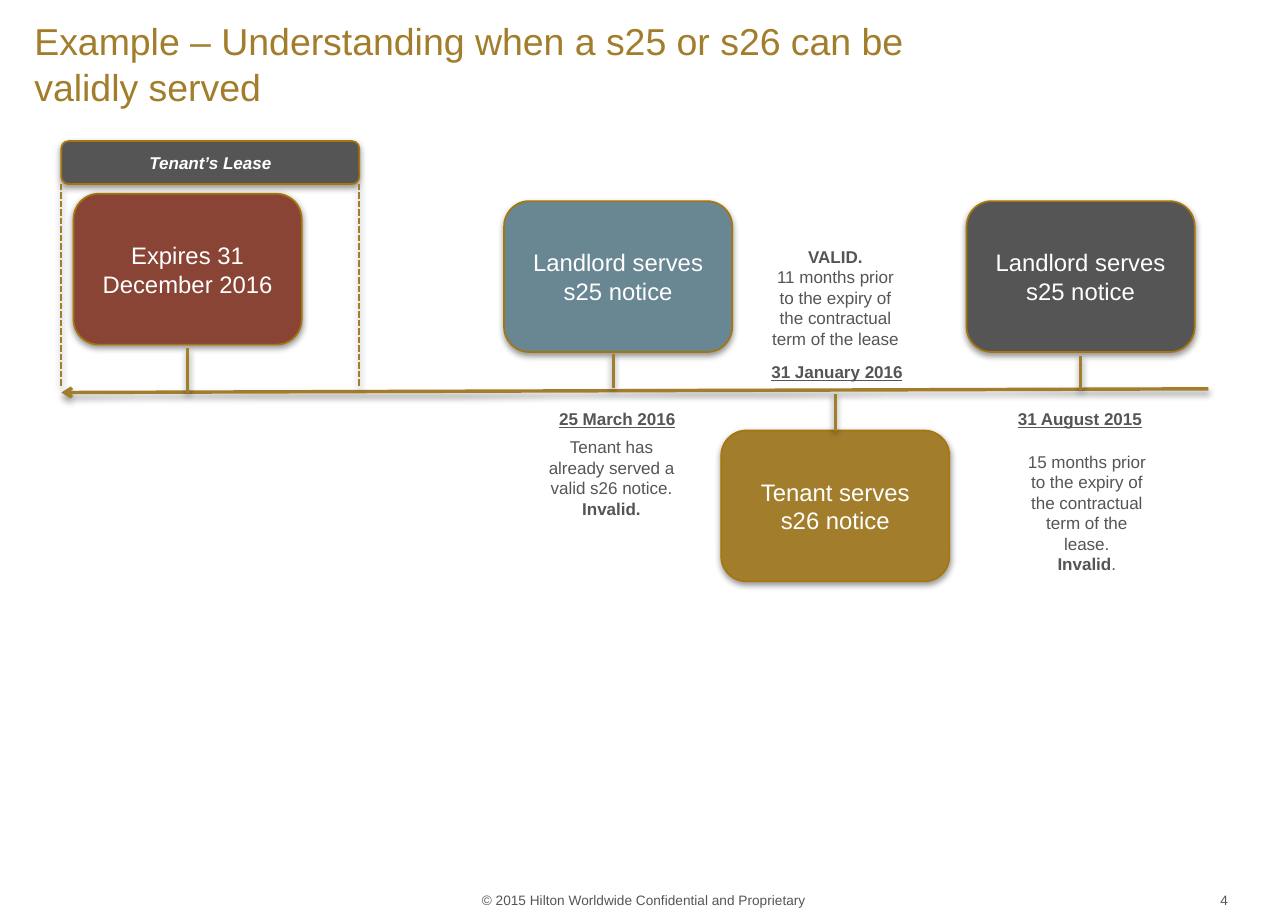
from lxml.etree import SubElement
from pptx import Presentation
from pptx.dml.color import RGBColor
from pptx.enum.dml import MSO_LINE
from pptx.enum.shapes import MSO_CONNECTOR, MSO_SHAPE
from pptx.enum.text import MSO_ANCHOR, MSO_AUTO_SIZE, PP_ALIGN
from pptx.oxml.ns import qn
from pptx.util import Inches, Pt

SLIDE_WIDTH, SLIDE_HEIGHT = Inches(10.5), Inches(7.5)
COLUMNS, ROWS = 42, 30
GOLD, EDGE, GREY = "A27E2C", "A4760C", "555555"
RED, TEAL, WHITE, BLACK = "8A4435", "698792", "FFFFFF", "000000"
NOTICE_SIZE = (7.44, 4.92)
AXIS_LEFT, LEASE_WIDTH = 2, 9.72
LEASE_TOP, LEASE_HEIGHT = 4.6, 1.4


def color(hex_string):
    return RGBColor.from_string(hex_string)


def column(count):
    return round(SLIDE_WIDTH * count / COLUMNS)


def row(count):
    return round(SLIDE_HEIGHT * count / ROWS)


def place(left, top, width, height):
    return column(left), row(top), column(width), row(height)


def style_font(font, size, hex_string, bold=None, italic=None, underline=None):
    font.size, font.name = Pt(size), "Arial"
    font.color.rgb = color(hex_string)
    font.bold, font.italic, font.underline = bold, italic, underline


def add_shadow(effects, distance, opacity):
    """Fill an effect list with a soft shadow that falls straight down."""
    shadow = SubElement(effects, qn("a:outerShdw"), blurRad=str(Pt(4)), dist=str(Pt(distance)),
                        dir="5400000", algn="ctr", rotWithShape="0")
    shade = SubElement(shadow, qn("a:srgbClr"), val=BLACK)
    SubElement(shade, qn("a:alpha"), val=str(opacity * 1000))


def add_title(slide, text):
    title = slide.shapes.title
    title.left, title.top, title.width, title.height = place(1.12, 1.16, 28.84, 1.8)
    frame = title.text_frame
    frame.text = text
    frame.auto_size = MSO_AUTO_SIZE.NONE
    frame.vertical_anchor = MSO_ANCHOR.MIDDLE
    frame.margin_left = 0
    para = frame.paragraphs[0]
    para.alignment = PP_ALIGN.LEFT
    para.line_spacing = Pt(26.7)
    style_font(para.font, 22, GOLD)


def add_text(slide, area, lines, align=PP_ALIGN.CENTER, anchor=MSO_ANCHOR.TOP, wrap=True):
    """Add a text box; each line is its text and its font settings."""
    frame = slide.shapes.add_textbox(*place(*area)).text_frame
    frame.word_wrap = wrap
    frame.vertical_anchor = anchor
    for index, (text, settings) in enumerate(lines):
        para = frame.add_paragraph() if index else frame.paragraphs[0]
        para.text = text
        para.alignment = align
        style_font(para.font, **settings)
    return frame


def add_date(slide, left, top, width, text, wrap=False):
    settings = dict(size=10, hex_string=GREY, bold=True, underline=True)
    add_text(slide, (left, top, width, 1.08), [(text, settings)], PP_ALIGN.LEFT, wrap=wrap)


def add_remark(slide, area, *lines):
    """Add a centred remark; each line is its text and whether it is bold."""
    return add_text(slide, area, [(text, dict(size=10, hex_string=GREY, bold=bold))
                                  for text, bold in lines])


def add_box(slide, area, text, fill, size=14, **emphasis):
    box = slide.shapes.add_shape(MSO_SHAPE.ROUNDED_RECTANGLE, *place(*area))
    box.fill.solid()
    box.fill.fore_color.rgb = color(fill)
    box.line.color.rgb = color(EDGE)
    box.line.width = Pt(1)
    box.shadow.inherit = False
    add_shadow(box.element.spPr.find(qn("a:effectLst")), 1.6, 42)
    frame = box.text_frame
    frame.text = text
    frame.vertical_anchor = MSO_ANCHOR.MIDDLE
    para = frame.paragraphs[0]
    para.alignment = PP_ALIGN.CENTER
    style_font(para.font, size, WHITE, **emphasis)
    return box


def add_line(slide, start, end, width=2, dash=None, arrow=False):
    line = slide.shapes.add_connector(MSO_CONNECTOR.STRAIGHT, column(start[0]), row(start[1]),
                                      column(end[0]), row(end[1]))
    line.line.color.rgb = color(GOLD)
    line.line.width = Pt(width)
    if dash:
        line.line.dash_style = dash
    properties = line.element.spPr
    if arrow:
        SubElement(properties.find(qn("a:ln")), qn("a:headEnd"), type="arrow")
    add_shadow(SubElement(properties, qn("a:effectLst")), 2, 40)
    return line


def add_lease(slide):
    bottom = LEASE_TOP + LEASE_HEIGHT
    add_box(slide, (AXIS_LEFT, LEASE_TOP, LEASE_WIDTH, LEASE_HEIGHT), "Tenant’s Lease", GREY,
            size=10, bold=True, italic=True)
    for edge in (AXIS_LEFT, AXIS_LEFT + LEASE_WIDTH):
        add_line(slide, (edge, bottom), (edge, 12.64), width=1.25, dash=MSO_LINE.SQUARE_DOT)


def add_timeline(slide):
    notices = [
        (2.4, 6.32, "Expires 31 December 2016", RED),
        (31.52, 6.56, "Landlord serves s25 notice", GREY),
        (16.44, 6.56, "Landlord serves s25 notice", TEAL),
    ]
    for left, top, text, fill in notices:
        add_box(slide, (left, top, *NOTICE_SIZE), text, fill)
    tenant_left, tenant_top = 23.52, 14.04
    tenant = add_box(slide, (tenant_left, tenant_top, *NOTICE_SIZE),
                     "Tenant serves s26 notice", GOLD)

    add_line(slide, (AXIS_LEFT, 12.8), (39.4, 12.68), arrow=True)
    for stem, top, bottom in [(6.12, 11.36, 12.8), (20, 11.56, 12.64), (35.24, 11.6, 12.72)]:
        add_line(slide, (stem, top), (stem, bottom))
    middle = tenant_left + NOTICE_SIZE[0] / 2
    tenant_stem = add_line(slide, (middle, 12.84), (middle, tenant_top))
    tenant_stem.end_connect(tenant, 0)


def add_remarks(slide):
    add_date(slide, 17.84, 13.12, 4.6, "25 March 2016")
    add_date(slide, 24.76, 11.6, 5.6, "31 January 2016", wrap=True)
    add_date(slide, 32.8, 13.12, 4.92, "31 August 2015")
    add_remark(slide, (17.28, 14.04, 5.32, 3.08),
               ("Tenant has already served a valid s26 notice.", False), ("Invalid.", True))
    add_remark(slide, (24.76, 7.84, 4.96, 4.44), ("VALID.", True),
               ("11 months prior to the expiry of the contractual term of the lease", False))
    late = add_remark(slide, (33.04, 14.52, 4.8, 4.44),
                      ("15 months prior to the expiry of the contractual term of the lease.", False),
                      ("Invalid", True))
    span = late.paragraphs[-1].add_run()
    span.text = "."
    span.font.bold = False


def add_footer(slide):
    small = dict(size=8, hex_string=GREY)
    add_text(slide, (15, 28.84, 12, 0.96),
             [("© 2015 Hilton Worldwide Confidential and Proprietary", small)],
             anchor=MSO_ANCHOR.BOTTOM)
    number = add_text(slide, (30.24, 28.56, 9.8, 1.6), [("4", small)],
                      PP_ALIGN.RIGHT, MSO_ANCHOR.MIDDLE)
    number.margin_left = number.margin_right = 0


def main():
    deck = Presentation()
    deck.slide_width, deck.slide_height = SLIDE_WIDTH, SLIDE_HEIGHT
    slide = deck.slides.add_slide(deck.slide_layouts[5])
    add_title(slide, "Example – Understanding when a s25 or s26 can be validly served")
    add_timeline(slide)
    add_lease(slide)
    add_remarks(slide)
    add_footer(slide)
    deck.save("out.pptx")


if __name__ == "__main__":
    main()
